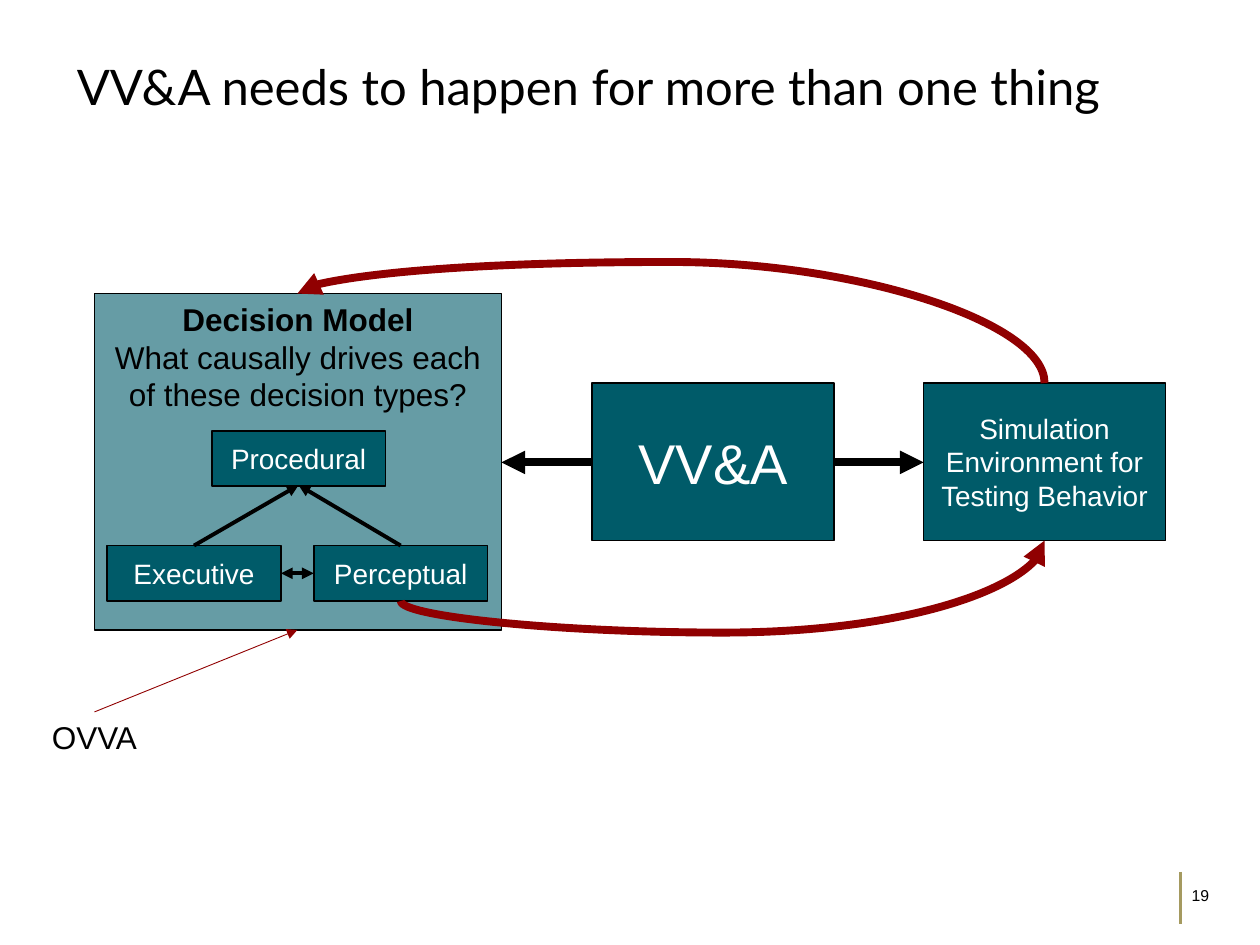
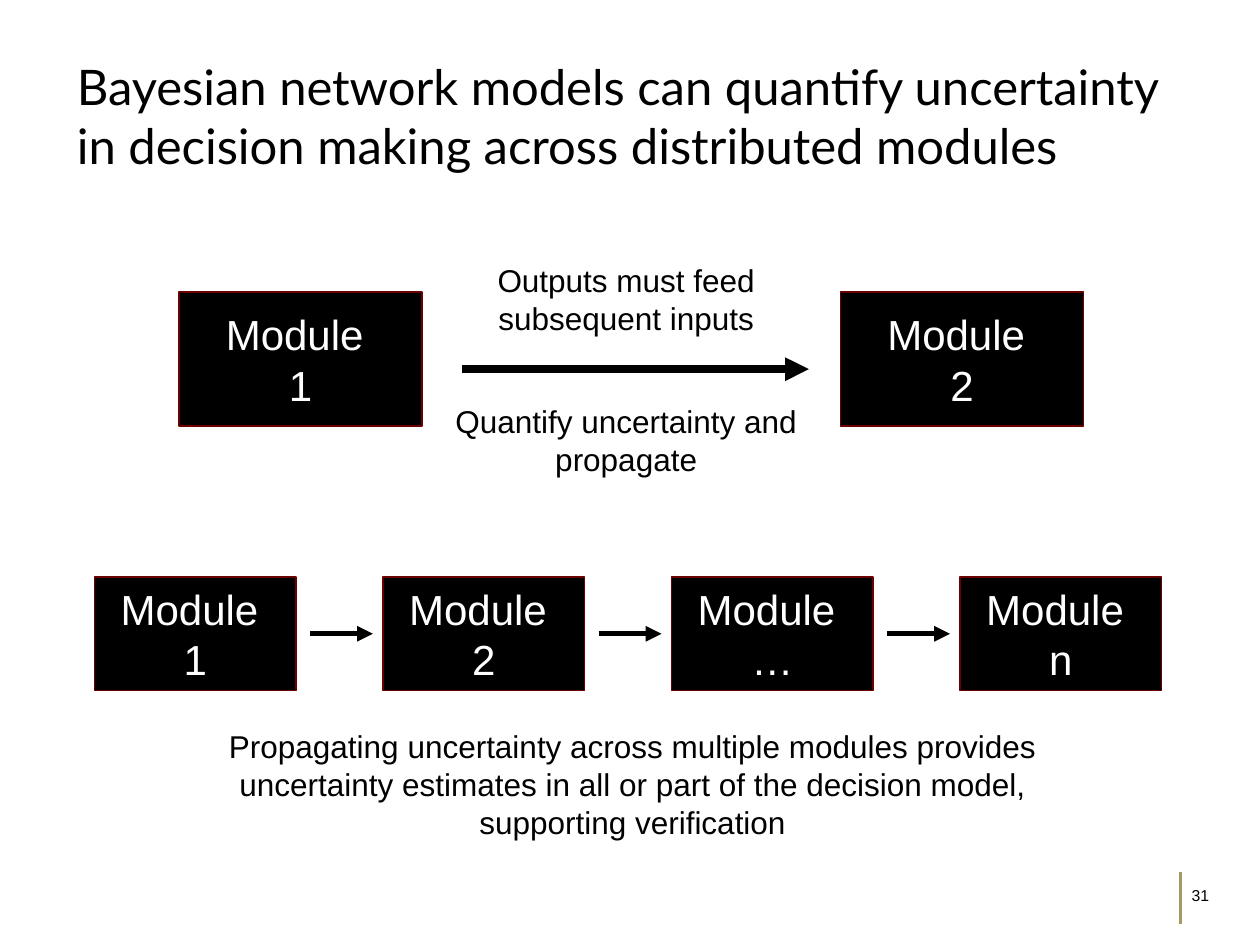
from pptx import Presentation
from pptx.dml.color import RGBColor
from pptx.enum import shapes, text
from pptx.oxml.ns import qn
from pptx.util import Inches, Pt
from lxml import etree

# Shared style
BLACK = RGBColor(0x00, 0x00, 0x00)
WHITE = RGBColor(0xFF, 0xFF, 0xFF)
TEAL = RGBColor(0x00, 0x5B, 0x69)
RED = RGBColor(0x90, 0x00, 0x01)
MAROON = RGBColor(0x6B, 0x00, 0x01)
GOLD = RGBColor(0xA5, 0x9A, 0x60)
BODY, HEAD = "Arial", "Lato"

# Slide 1 content: label, (left, top, width, height), size
MODEL = (0.75, 2.33, 3.23, 2.67)
MODEL_TEXT = ["Decision Model", "What causally drives each of these decision types?"]
TYPES = [
    ("Executive", (0.85, 4.33, 1.38, 0.44), 16),
    ("Perceptual", (2.49, 4.33, 1.38, 0.44), 16),
    ("Procedural", (1.68, 3.42, 1.38, 0.44), 16),
]
MAIN = [
    ("VV&A", (4.7, 3.04, 1.92, 1.25), 32),
    ("Simulation Environment for Testing Behavior", (7.33, 3.04, 1.92, 1.25), 16),
]
# Start, end, width, heads at both ends
LINKS = [
    ((4.7, 3.67), (3.98, 3.67), 4.5, False),
    ((6.61, 3.67), (7.33, 3.67), 4.5, False),
    ((1.54, 4.33), (2.37, 3.85), 2.25, False),
    ((3.18, 4.33), (2.37, 3.85), 2.25, False),
    ((2.49, 4.55), (2.23, 4.55), 2.25, True),
]
# Start, end, quarter turn, flips, bend in thousandths of a percent
LOOPS = [
    ((3.18, 4.77), (8.29, 4.29), 90, ("flipH", "flipV"), -52300),
    ((8.29, 3.04), (2.36, 2.33), 270, ("flipV",), 135300),
]

# Slide 2 content
PAIR = [("1", 1.42), ("2", 6.67)]
NOTES = [
    ("Outputs must feed subsequent inputs", (3.39, 2.02, 3.16, 0.71)),
    ("Quantify uncertainty and propagate", (3.39, 3.14, 3.16, 0.71)),
    ("Propagating uncertainty across multiple modules provides uncertainty "
     "estimates in all or part of the decision model, supporting verification",
     (1.51, 5.72, 7.02, 1.01)),
]
CHAIN = ["1", "2", "…", "n"]
LEFT, PITCH = 0.75, 2.29


def write(frame, lines, size, color, align=text.PP_ALIGN.CENTER, font=BODY):
    frame.word_wrap = True
    for i, line in enumerate(lines):
        para = frame.paragraphs[0] if i == 0 else frame.add_paragraph()
        para.text = line
        para.alignment = align
        para.font.name = font
        para.font.size = Pt(size)
        para.font.color.rgb = color


def label(slide, words, area, size=18, align=text.PP_ALIGN.CENTER):
    box = slide.shapes.add_textbox(*map(Inches, area))
    write(box.text_frame, [words], size, BLACK, align)


def block(slide, lines, area, size, fill, edge=BLACK, ink=WHITE):
    box = slide.shapes.add_shape(shapes.MSO_SHAPE.RECTANGLE, *map(Inches, area))
    box.shadow.inherit = False
    box.fill.solid()
    box.fill.fore_color.rgb = fill
    box.line.color.rgb = edge
    box.line.width = Pt(1)
    box.text_frame.vertical_anchor = text.MSO_ANCHOR.MIDDLE
    write(box.text_frame, lines, size, ink)
    return box


def line(slide, start, end, width, color=BLACK, ends=("tailEnd",),
         kind=shapes.MSO_CONNECTOR.STRAIGHT):
    link = slide.shapes.add_connector(kind, *map(Inches, start + end))
    link.line.color.rgb = color
    link.line.width = Pt(width)
    stroke = link.line._get_or_add_ln()
    for end_tag in ends:
        etree.SubElement(stroke, qn("a:" + end_tag), type="triangle")
    etree.SubElement(link._element.spPr, qn("a:effectLst"))
    return link


def loop(slide, start, end, turn, flips, bend):
    link = line(slide, start, end, 4.5, RED, kind=shapes.MSO_CONNECTOR.CURVE)
    # A quarter turn swaps width and height about the same centre
    wide, high = abs(end[0] - start[0]), abs(end[1] - start[1])
    mid_x, mid_y = (start[0] + end[0]) / 2, (start[1] + end[1]) / 2
    link.left, link.top = Inches(mid_x - high / 2), Inches(mid_y - wide / 2)
    link.width, link.height = Inches(high), Inches(wide)
    props = link._element.spPr
    frame = props.find(qn("a:xfrm"))
    frame.set("rot", str(turn * 60000))
    for flip in ("flipH", "flipV"):
        frame.set(flip, "1" if flip in flips else "0")
    guides = props.find(qn("a:prstGeom")).find(qn("a:avLst"))
    etree.SubElement(guides, qn("a:gd"), name="adj1", fmla=f"val {bend}")


def page(deck, title, number, width, height):
    slide = deck.slides.add_slide(deck.slide_layouts[5])
    head = slide.shapes.title
    head.left, head.top = Inches(0.51), Inches(0.4)
    head.width, head.height = Inches(width), Inches(height)
    head.text_frame.auto_size = text.MSO_AUTO_SIZE.NONE
    head.text_frame.vertical_anchor = text.MSO_ANCHOR.TOP
    write(head.text_frame, [title], 28, BLACK, text.PP_ALIGN.LEFT, HEAD)
    # Footer: page number and rule
    label(slide, number, (9.36, 6.98, 0.39, 0.27), 9, text.PP_ALIGN.LEFT)
    line(slide, (9.37, 6.92), (9.37, 7.33), 2, GOLD, ends=())
    return slide


def needs(deck):
    slide = page(deck, "VV&A needs to happen for more than one thing", "19", 9.16, 0.57)
    # Decision model panel
    panel = block(slide, MODEL_TEXT, MODEL, 18, TEAL, ink=BLACK)
    panel.text_frame.vertical_anchor = text.MSO_ANCHOR.TOP
    panel.text_frame.paragraphs[0].font.bold = True
    tint = panel._element.spPr.find(qn("a:solidFill"))[0]
    etree.SubElement(tint, qn("a:alpha"), val="60000")
    # Boxes and arrows
    for words, area, size in MAIN + TYPES:
        block(slide, [words], area, size, TEAL)
    for start, end, width, both in LINKS:
        line(slide, start, end, width, ends=("headEnd", "tailEnd") if both else ("tailEnd",))
    for item in LOOPS:
        loop(slide, *item)
    # Callout
    label(slide, "OVVA", (0, 5.65, 1.5, 0.4))
    line(slide, (0.75, 5.65), (2.36, 5), 0.5, RED)


def network(deck):
    slide = page(deck, "Bayesian network models can quantify uncertainty in decision "
                 "making across distributed modules", "31", 9, 1.04)
    # Two modules
    for name, left in PAIR:
        block(slide, ["Module ", name], (left, 2.32, 1.93, 1.06), 24, BLACK, MAROON)
    line(slide, (3.67, 2.93), (6.42, 2.93), 4.5)
    for words, area in NOTES:
        label(slide, words, area)
    # Chain of modules
    for i, name in enumerate(CHAIN):
        left = LEFT + i * PITCH
        block(slide, ["Module ", name], (left, 4.58, 1.6, 0.9), 24, BLACK, MAROON)
        if i < len(CHAIN) - 1:
            line(slide, (left + 1.71, 5.03), (left + 2.21, 5.03), 3)


def main():
    deck = Presentation()
    deck.slide_width, deck.slide_height = Inches(10), Inches(7.5)
    needs(deck)
    network(deck)
    deck.save("out.pptx")


if __name__ == "__main__":
    main()
